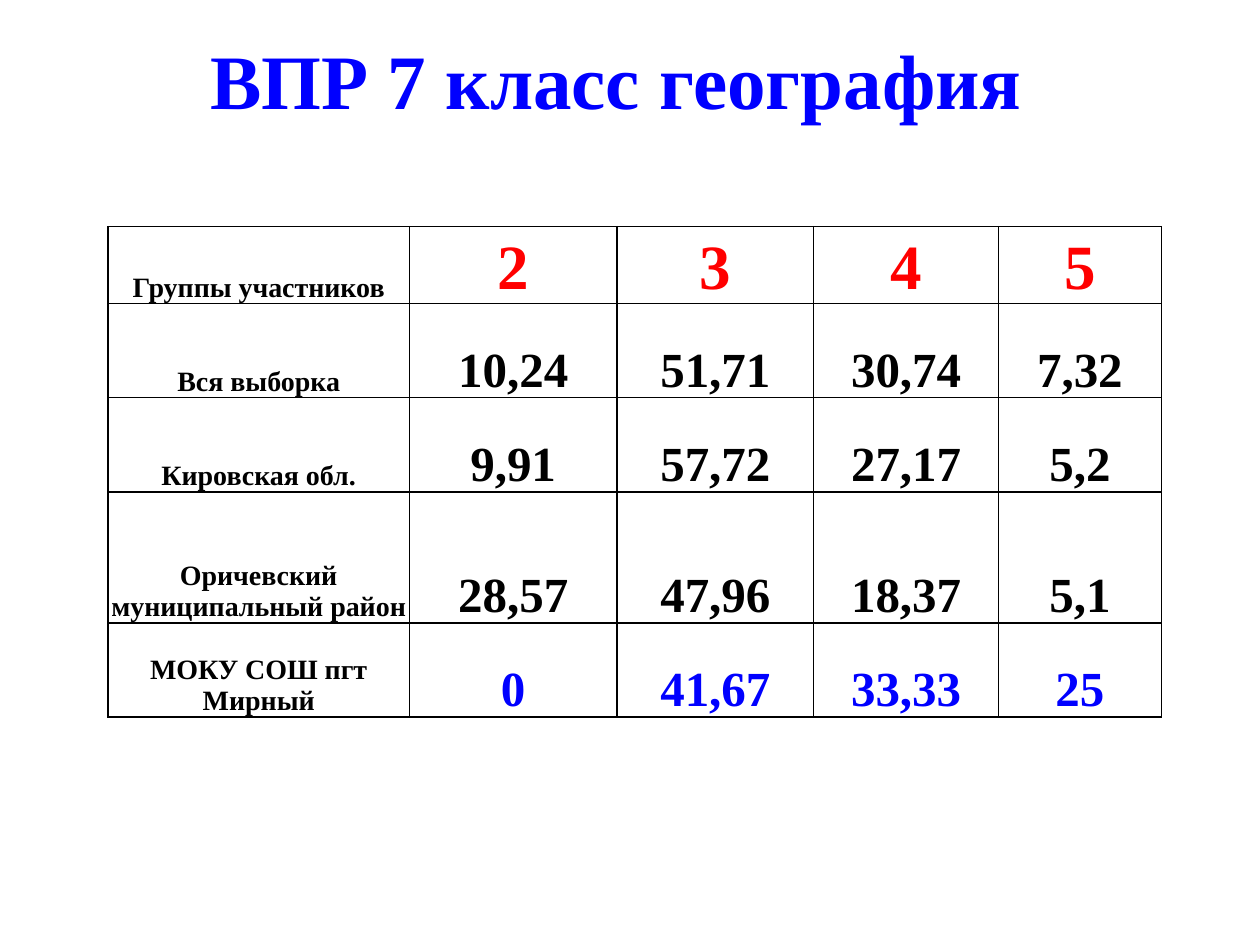
from lxml.etree import SubElement as Sub
from pptx import Presentation
from pptx.dml.color import RGBColor as Rgb
from pptx.enum.text import MSO_ANCHOR as Anchor, PP_ALIGN as Align
from pptx.oxml.ns import qn
from pptx.util import Cm, Pt

COLORS = {"blue": "0000FF", "red": "FF0000", "black": "000000"}
FONT = "Times New Roman"
WIDTHS = [6.07, 4.19, 3.96, 3.73, 3.28]
HEIGHTS = [1.5, 1.9, 1.9, 2.64, 1.9]
ROWS = [
    ["Группы участников", "2", "3", "4", "5"],
    ["Вся выборка", "10,24", "51,71", "30,74", "7,32"],
    ["Кировская обл.", "9,91", "57,72", "27,17", "5,2"],
    ["Оричевский муниципальный район", "28,57", "47,96", "18,37", "5,1"],
    ["МОКУ СОШ пгт Мирный", "0", "41,67", "33,33", "25"],
]
STYLES = {0: (36, "red"), len(ROWS) - 1: (28, "blue")}
LABEL = (16, "black")
VALUE = (28, "black")
INSETS = {
    "margin_left": Cm(0.02),
    "margin_right": Cm(0.02),
    "margin_top": Cm(0.02),
    "margin_bottom": Cm(0),
    "vertical_anchor": Anchor.BOTTOM,
}


def set_all(item, values):
    for name, value in values.items():
        setattr(item, name, value)


def write(frame, text, size, color):
    par = frame.paragraphs[0]
    par.alignment = Align.CENTER
    run = par.add_run()
    run.text = text
    set_all(run.font, {"name": FONT, "size": Pt(size), "bold": True})
    run.font.color.rgb = Rgb.from_string(COLORS[color])


def add_title(slide, text):
    box = slide.shapes.add_textbox(Cm(1), Cm(0), Cm(22.86), Cm(3.18))
    frame = box.text_frame
    set_all(frame, {"word_wrap": True, "vertical_anchor": Anchor.MIDDLE})
    write(frame, text, 44, "blue")


def add_edges(cell):
    props = cell._tc.get_or_add_tcPr()
    for side in ("lnL", "lnR", "lnT", "lnB"):
        line = Sub(props, qn(f"a:{side}"), w=str(Pt(1)))
        fill = Sub(line, qn("a:solidFill"))
        Sub(fill, qn("a:srgbClr"), val=COLORS["black"])


def add_grid(slide):
    frame = slide.shapes.add_table(
        len(ROWS), len(WIDTHS), Cm(2.18), Cm(4.57),
        Cm(sum(WIDTHS)), Cm(sum(HEIGHTS)))
    table = frame.table
    set_all(table, {"first_row": False, "horz_banding": False})
    for col, width in zip(table.columns, WIDTHS):
        col.width = Cm(width)
    for row, height in zip(table.rows, HEIGHTS):
        row.height = Cm(height)
    for r, texts in enumerate(ROWS):
        for c, text in enumerate(texts):
            cell = table.cell(r, c)
            set_all(cell, INSETS)
            add_edges(cell)
            cell.fill.background()
            style = STYLES.get(r, VALUE) if c else LABEL
            write(cell.text_frame, text, *style)


def main():
    deck = Presentation()
    set_all(deck, {"slide_width": Cm(25.4), "slide_height": Cm(19.05)})
    slide = deck.slides.add_slide(deck.slide_layouts[6])
    add_title(slide, "ВПР 7 класс география")
    add_grid(slide)
    deck.save("out.pptx")


if __name__ == "__main__":
    main()
